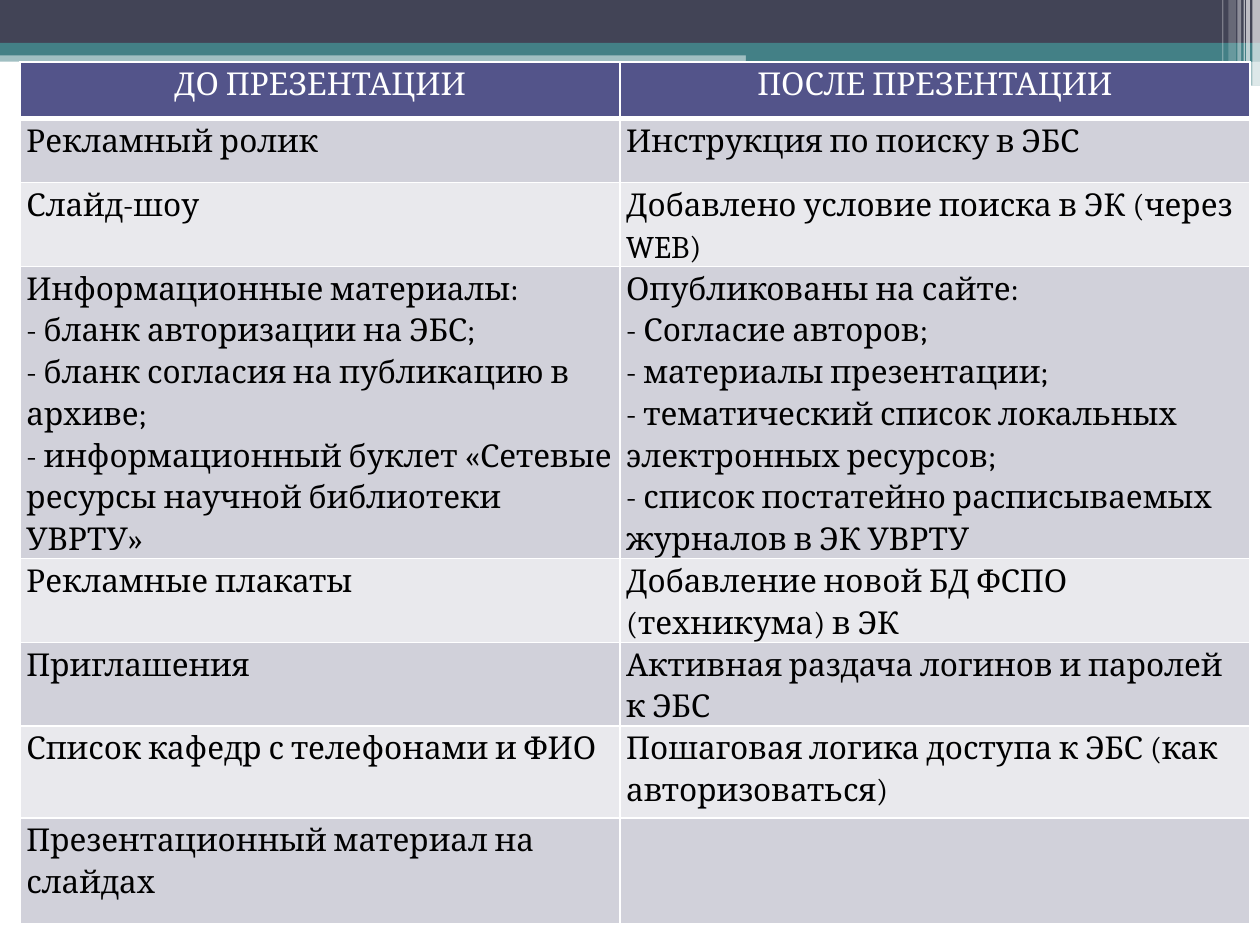
from lxml import etree
from pptx import Presentation
from pptx.dml.color import RGBColor
from pptx.enum.shapes import MSO_SHAPE
from pptx.enum.text import PP_ALIGN
from pptx.oxml.ns import qn
from pptx.util import Inches, Pt

RECT, ROUND = MSO_SHAPE.RECTANGLE, MSO_SHAPE.ROUNDED_RECTANGLE
CENTER, LEFT = PP_ALIGN.CENTER, PP_ALIGN.LEFT
FONT = "Cambria"
WHITE, BLACK, TEAL, SLATE = "FFFFFF", "000000", "438086", "424456"
HEAD, BANDS = "53548A", ("D1D1DA", "E9E9ED")

# kind, left, top, width, height, colour, opacity in percent
BARS = [
    (RECT, 0, 0.4, 10, 0.09, TEAL, 50),
    (RECT, 0, 0, 10, 0.34, SLATE, 100),
    (RECT, 0, 0.34, 10, 0.1, TEAL, 100),
    (RECT, 5.92, 0.39, 4.08, 0.1, TEAL, 100),
    (RECT, 5.92, 0.48, 4.08, 0.2, TEAL, 50),
    (ROUND, 5.91, 0.54, 3.35, 0.03, WHITE, 100),
    (ROUND, 8.06, 0.64, 1.75, 0.04, WHITE, 100),
]
# left, width, height, opacity of the upright stripes at the top right
STRIPES = [
    (9.94, 0.06, 0.68, 65),
    (9.89, 0.03, 0.68, 65),
    (9.87, 0.01, 0.68, 60),
    (9.82, 0.03, 0.68, 40),
    (9.75, 0.06, 0.64, 20),
    (9.7, 0.01, 0.64, 30),
]
COLS = (4.76, 5)
# row height, left paragraphs, right paragraphs
ROWS = [
    (0.45, ["ДО ПРЕЗЕНТАЦИИ"], ["ПОСЛЕ ПРЕЗЕНТАЦИИ"]),
    (0.51, ["Рекламный ролик"], ["Инструкция по поиску в ЭБС"]),
    (0.52, ["Слайд-шоу"], ["Добавлено условие поиска в ЭК (через WEB)"]),
    (2.3,
     ["Информационные материалы:",
      "- бланк авторизации на ЭБС;",
      "- бланк согласия на публикацию в архиве;",
      "- информационный буклет «Сетевые ресурсы научной библиотеки УВРТУ»"],
     ["Опубликованы на сайте:",
      "- Согласие авторов;",
      "- материалы презентации;",
      "- тематический список локальных электронных ресурсов;",
      "- список постатейно расписываемых журналов в ЭК УВРТУ"]),
    (0.66, ["Рекламные плакаты"], ["Добавление новой БД ФСПО (техникума) в ЭК"]),
    (0.45, ["Приглашения"], ["Активная раздача логинов и паролей к ЭБС"]),
    (0.73, ["Список кафедр с телефонами и ФИО"],
     ["Пошаговая логика доступа к ЭБС (как авторизоваться)"]),
    (0.84, ["Презентационный материал на слайдах"], []),
]


def paint(fill, color):
    fill.solid()
    fill.fore_color.rgb = RGBColor.from_string(color)


def add_bar(slide, kind, x, y, w, h, color, alpha):
    bar = slide.shapes.add_shape(kind, Inches(x), Inches(y), Inches(w), Inches(h))
    bar.shadow.inherit = False
    paint(bar.fill, color)
    bar.line.fill.background()
    if alpha < 100:
        clr = bar.element.spPr.find(f"{qn('a:solidFill')}/{qn('a:srgbClr')}")
        etree.SubElement(clr, qn("a:alpha"), val=str(alpha * 1000))


def add_edges(cell, base):
    """Draw white cell borders; base is the width of the bottom one."""
    props = cell._tc.get_or_add_tcPr()
    for side, width in (("L", 1), ("R", 1), ("T", 1), ("B", base)):
        edge = etree.SubElement(props, qn("a:ln" + side), w=str(Pt(width)))
        fill = etree.SubElement(edge, qn("a:solidFill"))
        etree.SubElement(fill, qn("a:srgbClr"), val=WHITE)


def fill_cell(cell, lines, row):
    head = row == 0
    cell.margin_left = cell.margin_right = Inches(0.05)
    cell.margin_top = cell.margin_bottom = 0
    add_edges(cell, 3 if head else 1)
    paint(cell.fill, HEAD if head else BANDS[(row - 1) % 2])
    frame = cell.text_frame
    for i, line in enumerate(lines):
        para = frame.add_paragraph() if i else frame.paragraphs[0]
        para.alignment = CENTER if head else LEFT
        para.line_spacing = 1.15
        run = para.add_run()
        run.text = line
        run.font.name, run.font.size = FONT, Pt(18)
        run.font.bold = False
        run.font.color.rgb = RGBColor.from_string(WHITE if head else BLACK)


def add_grid(slide):
    high = sum(row[0] for row in ROWS)
    grid = slide.shapes.add_table(
        len(ROWS), len(COLS), Inches(0.16), Inches(0.49),
        Inches(sum(COLS)), Inches(high)).table
    for col, width in zip(grid.columns, COLS):
        col.width = Inches(width)
    for r, (height, *cells) in enumerate(ROWS):
        grid.rows[r].height = Inches(height)
        for c, lines in enumerate(cells):
            fill_cell(grid.cell(r, c), lines, r)


def main():
    deck = Presentation()
    deck.slide_width, deck.slide_height = Inches(10), Inches(7.5)
    slide = deck.slides.add_slide(deck.slide_layouts[6])
    paint(slide.background.fill, WHITE)
    for bar in BARS:
        add_bar(slide, *bar)
    for x, w, h, alpha in STRIPES:
        add_bar(slide, RECT, x, 0, w, h, WHITE, alpha)
    add_grid(slide)
    deck.save("out.pptx")


if __name__ == "__main__":
    main()
